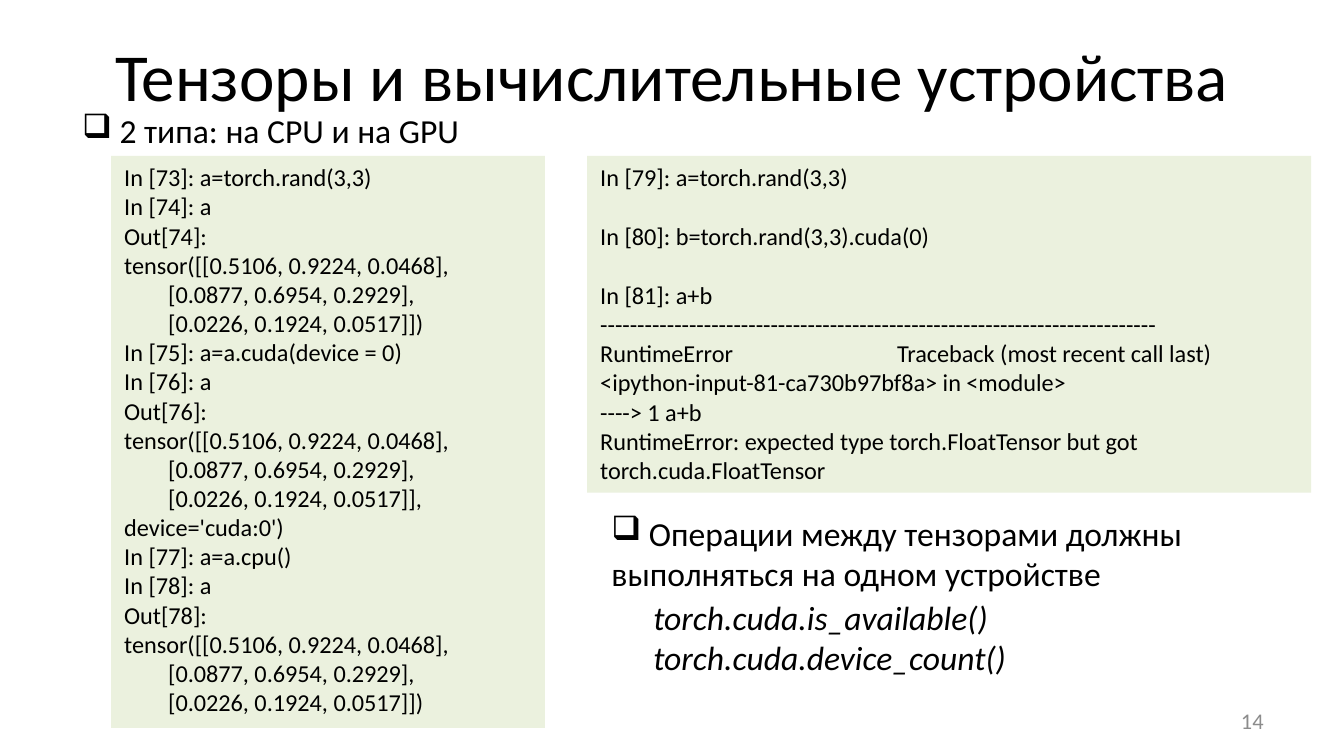
from lxml.etree import SubElement
from pptx import Presentation
from pptx.dml.color import RGBColor
from pptx.enum.shapes import MSO_SHAPE
from pptx.enum.text import MSO_ANCHOR, MSO_AUTO_SIZE, PP_ALIGN
from pptx.oxml.ns import qn
from pptx.util import Pt

COLORS = {"text": "000000", "code": "EBF1DE", "number": "8C8C8C"}
FONT = "Calibri"
CODE_SIZE = 13
CODE_LINE = 15.9
MATRIX_INDENT = 23.5
TRACEBACK_TAB = 159

MATRIX_START = ["tensor([[0.5106, 0.9224, 0.0468],", "[0.0877, 0.6954, 0.2929],"]
MATRIX_END = "[0.0226, 0.1924, 0.0517]]"
TRANSFER_CODE = [
    "In [73]: a=torch.rand(3,3)",
    "In [74]: a",
    "Out[74]:",
    *MATRIX_START,
    MATRIX_END + ")",
    "In [75]: a=a.cuda(device = 0)",
    "In [76]: a",
    "Out[76]:",
    *MATRIX_START,
    MATRIX_END + ", device='cuda:0')",
    "In [77]: a=a.cpu()",
    "In [78]: a",
    "Out[78]:",
    *MATRIX_START,
    MATRIX_END + ")",
]
ERROR_CODE = [
    "In [79]: a=torch.rand(3,3)",
    "In [80]: b=torch.rand(3,3).cuda(0)",
    "In [81]: a+b",
    "-" * 75,
    "RuntimeError\tTraceback (most recent call last)",
    "<ipython-input-81-ca730b97bf8a> in <module>",
    "----> 1 a+b",
    "RuntimeError: expected type torch.FloatTensor but got torch.cuda.FloatTensor",
]


def rgb(name):
    return RGBColor.from_string(COLORS[name])


def style(paragraph, size, color="text", italic=False):
    font = paragraph.font
    font.name, font.size, font.italic = FONT, Pt(size), italic
    font.color.rgb = rgb(color)


def fill_paragraphs(frame, lines):
    """Put one line in each paragraph and return the paragraphs."""
    frame.text = "\n".join(lines)
    return frame.paragraphs


def add_text(slide, box, lines, size=18, color="text", italic=False, wrap=True):
    frame = slide.shapes.add_textbox(*map(Pt, box)).text_frame
    frame.word_wrap = wrap
    for paragraph in fill_paragraphs(frame, lines):
        style(paragraph, size, color, italic)
    return frame


def add_bullet(slide, box, line, wrap=True):
    frame = add_text(slide, box, [" " + line], wrap=wrap)
    properties = frame.paragraphs[0]._p.get_or_add_pPr()
    bullet = SubElement(properties, qn("a:buChar"), char="❑")
    properties.insert(0, bullet)


def add_code(slide, box, lines, spaced=()):
    """Add a code panel; lines whose numbers are in spaced follow a gap."""
    panel = slide.shapes.add_shape(MSO_SHAPE.RECTANGLE, *map(Pt, box))
    panel.shadow.inherit = False
    panel.fill.solid()
    panel.fill.fore_color.rgb = rgb("code")
    panel.line.fill.background()
    frame = panel.text_frame
    frame.word_wrap = True
    frame.vertical_anchor = MSO_ANCHOR.TOP
    for number, paragraph in enumerate(fill_paragraphs(frame, lines)):
        paragraph.alignment = PP_ALIGN.LEFT
        properties = paragraph._p.get_or_add_pPr()
        if number in spaced:
            paragraph.space_before = Pt(CODE_LINE)
        if lines[number].startswith("["):
            properties.set("marL", "0")
            properties.set("indent", str(Pt(MATRIX_INDENT)))
        if "\t" in lines[number]:
            tabs = SubElement(properties, qn("a:tabLst"))
            SubElement(tabs, qn("a:tab"), pos=str(Pt(TRACEBACK_TAB)), algn="l")
        style(paragraph, CODE_SIZE)


def set_title(slide, box, line):
    title = slide.shapes.title
    title.left, title.top, title.width, title.height = map(Pt, box)
    frame = title.text_frame
    frame.auto_size = MSO_AUTO_SIZE.NONE
    frame.vertical_anchor = MSO_ANCHOR.MIDDLE
    paragraph = fill_paragraphs(frame, [line])[0]
    paragraph.alignment = PP_ALIGN.CENTER
    style(paragraph, 36)


def add_page_number(slide, box, number):
    frame = add_text(slide, box, [number], 12, "number")
    frame.vertical_anchor = MSO_ANCHOR.MIDDLE
    frame.paragraphs[0].alignment = PP_ALIGN.RIGHT


def main():
    presentation = Presentation()
    presentation.slide_width, presentation.slide_height = Pt(720), Pt(405)
    slide = presentation.slides.add_slide(presentation.slide_layouts[5])
    set_title(slide, (36, 6, 648, 67.5), "Тензоры и вычислительные устройства")
    add_bullet(slide, (37, 55.5, 219, 29), "2 типа: на CPU и на GPU", wrap=False)
    add_code(slide, (59.5, 83.5, 232.5, 306.5), TRANSFER_CODE)
    add_code(slide, (314.5, 83.5, 388, 180.5), ERROR_CODE, spaced=(1, 2))
    add_bullet(slide, (320.5, 271, 374.5, 51),
               "Операции между тензорами должны выполняться на одном устройстве")
    add_text(slide, (343, 316, 249, 51),
             ["torch.cuda.is_available()", "torch.cuda.device_count()"], italic=True)
    add_page_number(slide, (516, 375.5, 168, 21.5), "14")
    presentation.save("out.pptx")


if __name__ == "__main__":
    main()
